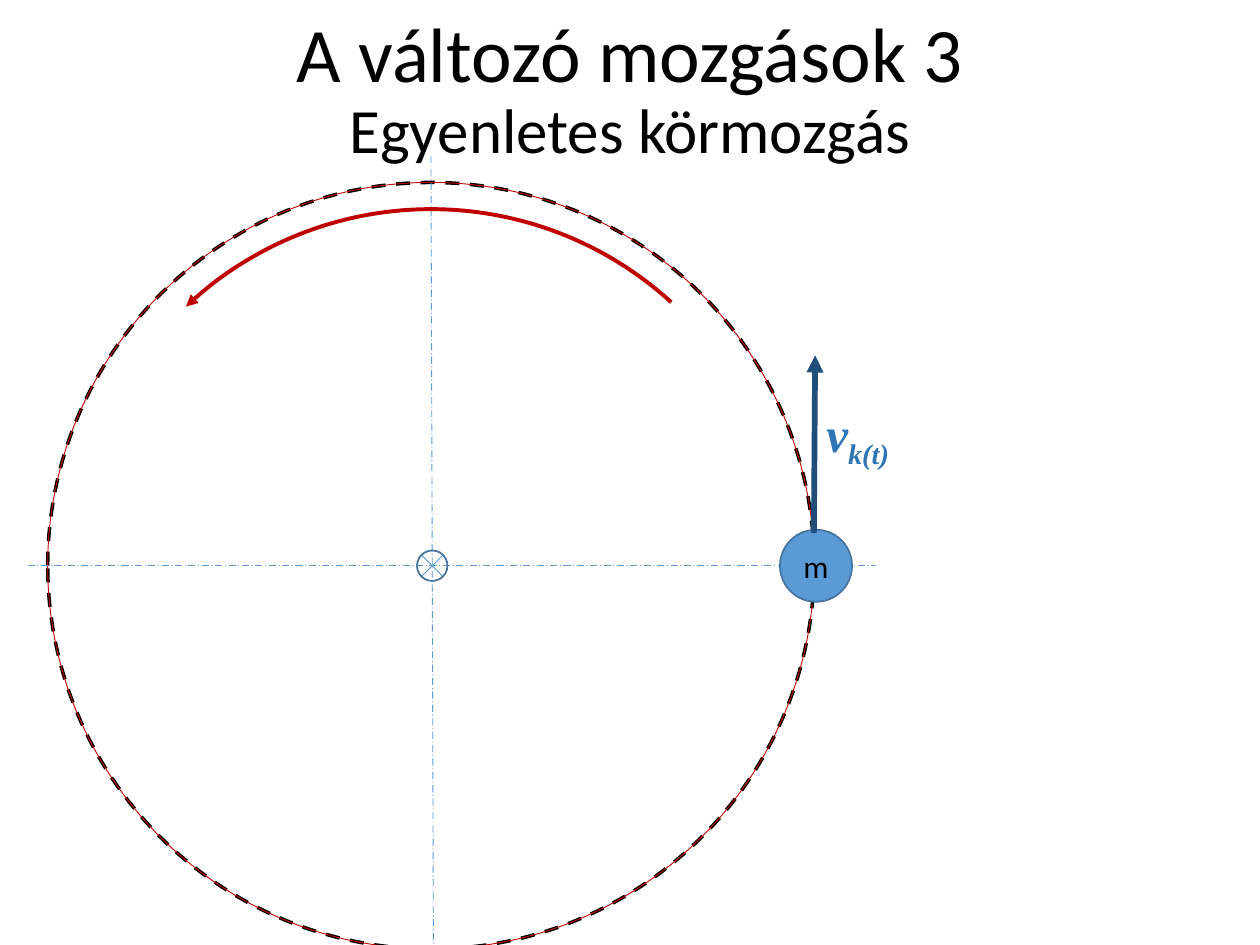
from lxml import etree
from pptx import Presentation
from pptx.dml.color import RGBColor
from pptx.enum.dml import MSO_LINE
from pptx.enum.shapes import MSO_CONNECTOR, MSO_SHAPE
from pptx.enum.text import MSO_ANCHOR, PP_ALIGN
from pptx.oxml.ns import qn
from pptx.util import Pt

OVAL, ARC = MSO_SHAPE.OVAL, MSO_SHAPE.ARC
STRAIGHT = MSO_CONNECTOR.STRAIGHT
DASH, AXIS_DASH = MSO_LINE.DASH, MSO_LINE.LONG_DASH_DOT
MIDDLE, CENTER = MSO_ANCHOR.MIDDLE, PP_ALIGN.CENTER
BLACK, RED, BLUE = "000000", "C00000", "5B9BD5"
EDGE, NAVY, LABEL = "43739E", "1F4E79", "2E75B6"


def color(code):
    return RGBColor.from_string(code)


def style(line, code, width, dash=None):
    line.color.rgb = color(code)
    line.width = Pt(width)
    if dash:
        line.dash_style = dash


def add_tip(shape, end):
    """Put an arrowhead on an end: headEnd is the start, tailEnd the finish."""
    line = shape.line._get_or_add_ln()
    etree.SubElement(line, qn("a:" + end)).set("type", "triangle")


def set_font(run, size, code=BLACK, name="Calibri"):
    run.font.size = Pt(size)
    run.font.name = name
    run.font.color.rgb = color(code)


def add_round(slide, kind, x, y, radius, code, width, dash=None, fill=None):
    """Add a circle or arc centred on x, y."""
    shape = slide.shapes.add_shape(
        kind, Pt(x - radius), Pt(y - radius), Pt(2 * radius), Pt(2 * radius))
    shape.shadow.inherit = False
    if fill:
        shape.fill.solid()
        shape.fill.fore_color.rgb = color(fill)
    else:
        shape.fill.background()
    style(shape.line, code, width, dash)
    return shape


def add_arc(slide, x, y, radius, start, end, width):
    """Add a red arc; angles are degrees clockwise from the right."""
    arc = add_round(slide, ARC, x, y, radius, RED, width)
    for i, angle in enumerate((start, end)):
        arc.adjustments[i] = angle * 0.6
    return arc


def add_line(slide, x1, y1, x2, y2, code=BLUE, width=0.5, dash=None):
    line = slide.shapes.add_connector(STRAIGHT, Pt(x1), Pt(y1), Pt(x2), Pt(y2))
    style(line.line, code, width, dash)
    etree.SubElement(line._element.spPr, qn("a:effectLst"))
    return line


def add_title(slide, x, y, w, h):
    frame = slide.shapes.add_textbox(Pt(x), Pt(y), Pt(w), Pt(h)).text_frame
    frame.word_wrap = True
    frame.vertical_anchor = MIDDLE
    para = frame.paragraphs[0]
    para.text = "A változó mozgások 3\vEgyenletes körmozgás"
    para.alignment = CENTER
    para.line_spacing = 0.9
    for run, size in zip(para.runs, (44, 36)):
        set_font(run, size)


def add_track(slide, x, y, radius):
    """Draw the circular path and its two axes."""
    add_round(slide, OVAL, x, y, radius, BLACK, 2, DASH)
    add_arc(slide, x, y, radius, 5.71, 0, 0.5)
    add_line(slide, x - 230.5, y, x + 254, y, dash=AXIS_DASH)
    add_line(slide, x + 1.4, y + 229, x, y - 234, dash=AXIS_DASH)


def add_ball(slide, x, y, radius):
    ball = add_round(slide, OVAL, x, y, radius, EDGE, 1, fill=BLUE)
    frame = ball.text_frame
    frame.text = "m"
    frame.vertical_anchor = MIDDLE
    frame.paragraphs[0].alignment = CENTER
    set_font(frame.paragraphs[0].runs[0], 18)


def add_hub(slide, x, y, radius):
    arm = radius * 0.74
    for rise in (arm, -arm):
        add_line(slide, x - arm, y - rise, x + arm, y + rise)
    add_round(slide, OVAL, x, y, radius, EDGE, 1)


def add_speed(slide, x, y, length):
    """Draw the velocity arrow upward from x, y with its label."""
    arrow = add_line(slide, x, y, x + 0.7, y - length, NAVY, 3.25)
    add_tip(arrow, "tailEnd")
    box = slide.shapes.add_textbox(Pt(x), Pt(y - 77.8), Pt(54), Pt(64))
    box.text_frame.word_wrap = False
    para = box.text_frame.paragraphs[0]
    for text in ("v", "k(t)"):
        run = para.add_run()
        run.text = text
        set_font(run, 28, LABEL, "Times New Roman")
        run.font.bold = run.font.italic = True
    run._r.get_or_add_rPr().set("baseline", "-25000")


def main():
    deck = Presentation()
    deck.slide_width, deck.slide_height = Pt(720), Pt(540)
    slide = deck.slides.add_slide(deck.slide_layouts[6])
    x, y = 246.3, 323.3
    add_title(slide, 16, 0, 688, 104.5)
    add_track(slide, x, y, 219)
    add_ball(slide, x + 220, y, 20.6)
    add_hub(slide, x + 0.7, y, 8.7)
    add_speed(slide, x + 218.8, y - 18.7, 101.5)
    turn = add_arc(slide, x, y, 203.8, 226.62, 312.36, 2.25)
    add_tip(turn, "headEnd")
    deck.save("out.pptx")


if __name__ == "__main__":
    main()
